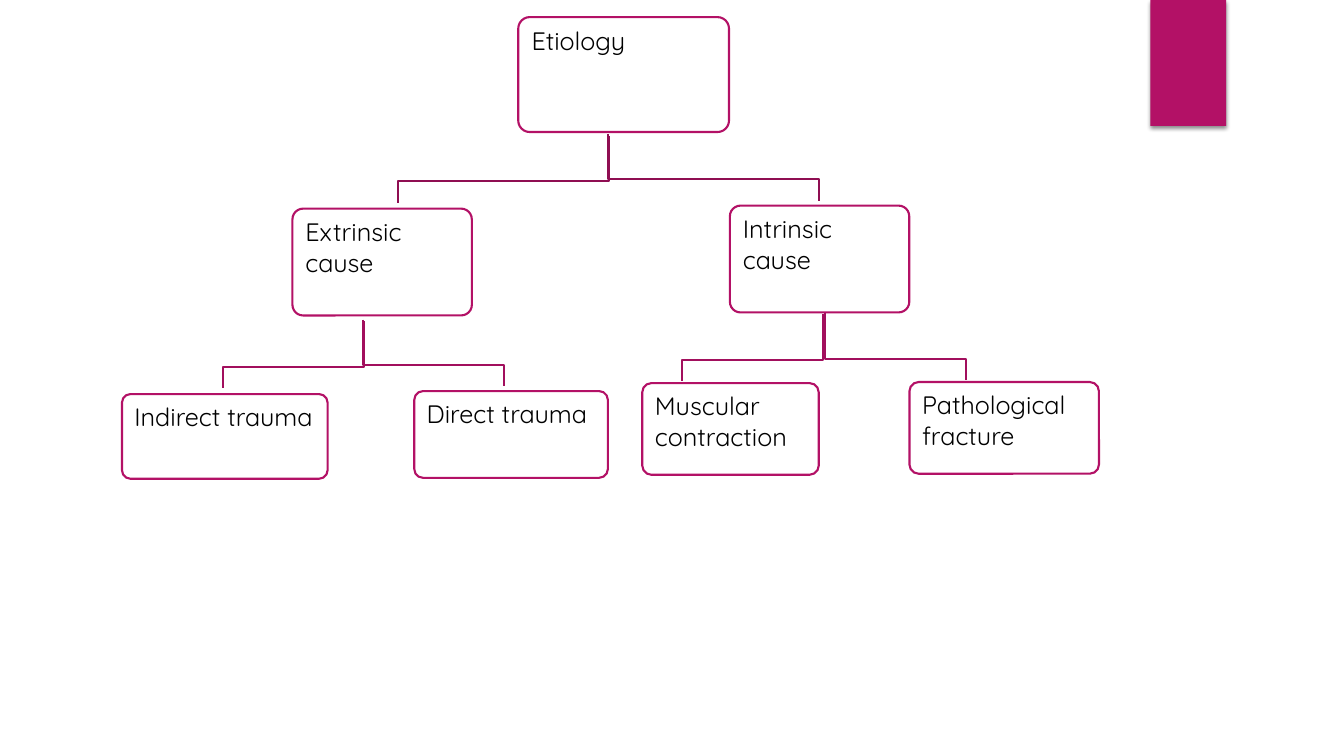
from lxml.etree import SubElement
from pptx import Presentation
from pptx.dml.color import RGBColor
from pptx.enum.shapes import MSO_SHAPE as Shape
from pptx.enum.text import MSO_ANCHOR as Anchor, PP_ALIGN as Align
from pptx.oxml import parse_xml
from pptx.oxml.ns import nsdecls, qn
from pptx.util import Inches, Pt

MAGENTA, PLUM, DARK_PLUM = "B31166", "A20F5D", "8F0E52"
WHITE, BLACK = "FFFFFF", "000000"
FONT = "Quicksand"
DROP, BRANCH_HEIGHT = 6, 8.8

CAUSES = [
    ("Etiology", (38.56, 2.27, 15.68, 15.2)),
    ("Intrinsic cause", (54.31, 27.2, 13.35, 14.13)),
    ("Indirect trauma", (9.08, 52.13, 15.3, 11.2)),
    ("Direct trauma", (30.83, 51.73, 14.4, 11.47)),
    ("Muscular contraction", (47.79, 50.67, 13.13, 12.13)),
    ("Pathological fracture", (67.67, 50.53, 14.1, 12.13)),
    ("Extrinsic cause", (21.76, 27.6, 13.35, 14.13)),
]
BRANCHES = [
    (45.24, 17.73, 15.68, DARK_PLUM),
    (45.31, 18, -15.68, DARK_PLUM),
    (27.01, 42.27, 10.5, PLUM),
    (27.08, 42.53, -10.5, PLUM),
    (61.22, 41.6, -10.5, PLUM),
    (61.37, 41.47, 10.5, PLUM),
]


def color(hex_value):
    return RGBColor.from_string(hex_value)


def place(box, x, y):
    left, top, width, height = box
    return round(left + width * x / 100), round(top + height * y / 100)


def span(box, width, height):
    return round(box[2] * width / 100), round(box[3] * height / 100)


def outline(shape, hex_value):
    shape.shadow.inherit = False
    shape.line.color.rgb = color(hex_value)
    shape.line.width = Pt(1.5)


def add_ribbon(slide, box):
    ribbon = slide.shapes.add_shape(
        Shape.RECTANGLE, *place(box, 85.6, 0), *span(box, 5.63, 16.67))
    ribbon.fill.solid()
    ribbon.fill.fore_color.rgb = color(MAGENTA)
    ribbon.line.fill.background()
    ribbon._element.spPr.append(parse_xml(
        f'<a:effectLst {nsdecls("a")}>'
        f'<a:outerShdw blurRad="{Pt(3)}" dist="{Pt(2)}" dir="5400000" rotWithShape="0">'
        f'<a:srgbClr val="{BLACK}"><a:alpha val="45000"/></a:srgbClr>'
        '</a:outerShdw></a:effectLst>'))


def add_branch(slide, box, x, y, reach, hex_value):
    corners = [(x, y + DROP), (x + reach, y + DROP), (x + reach, y + BRANCH_HEIGHT)]
    builder = slide.shapes.build_freeform(*place(box, x, y))
    builder.add_line_segments([place(box, *corner) for corner in corners], close=False)
    branch = builder.convert_to_shape()
    branch.fill.background()
    outline(branch, hex_value)


def add_cause(slide, box, label, area):
    x, y, width, height = area
    cause = slide.shapes.add_shape(
        Shape.ROUNDED_RECTANGLE, *place(box, x, y), *span(box, width, height))
    cause.adjustments[0] = 0.1
    cause.fill.solid()
    cause.fill.fore_color.rgb = color(WHITE)
    fill_color = cause._element.spPr.find(qn("a:solidFill"))[0]
    SubElement(fill_color, qn("a:alpha"), val="90000")
    outline(cause, MAGENTA)
    frame = cause.text_frame
    frame.text = label
    frame.word_wrap = True
    frame.vertical_anchor = Anchor.TOP
    frame.margin_right = Inches(0.05)
    paragraph = frame.paragraphs[0]
    paragraph.alignment = Align.LEFT
    font = paragraph.runs[0].font
    font.name, font.size = FONT, Pt(18)
    font.color.rgb = color(BLACK)


def add_tree(slide, box):
    for branch in BRANCHES:
        add_branch(slide, box, *branch)
    for label, area in CAUSES:
        add_cause(slide, box, label, area)


def main():
    deck = Presentation()
    deck.slide_width, deck.slide_height = Inches(13.33), Inches(7.5)
    slide = deck.slides.add_slide(deck.slide_layouts[6])
    page = (0, 0, deck.slide_width, deck.slide_height)
    add_ribbon(slide, page)
    add_tree(slide, page)
    deck.save("out.pptx")


if __name__ == "__main__":
    main()
